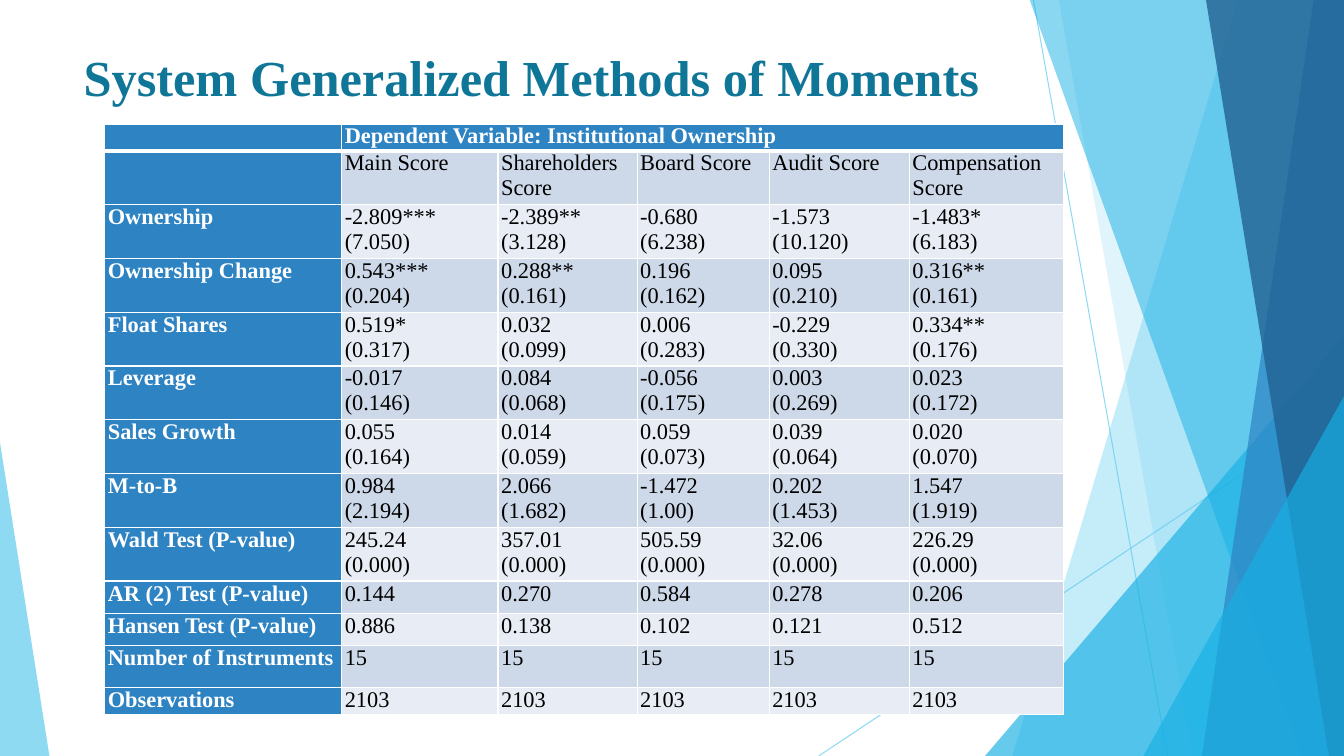
from dataclasses import dataclass
from typing import Any, NamedTuple

import lxml.etree
import pptx
import pptx.dml.color
import pptx.enum.shapes
import pptx.enum.text
import pptx.oxml.ns
import pptx.util

Inches = pptx.util.Inches
qn = pptx.oxml.ns.qn


@dataclass(frozen=True)
class Theme:
    font: str = "Times New Roman"
    title_size: int = 36
    cell_size: int = 16
    title: str = "0F7698"
    sky: str = "5FCBEF"
    cyan: str = "17B0E4"
    blue: str = "2E83C3"
    navy: str = "226292"
    dark_band: str = "CDD9E9"
    light_band: str = "E8EDF5"
    white: str = "FFFFFF"
    black: str = "000000"


THEME = Theme()


class Line(NamedTuple):
    start: tuple[float, float]
    end: tuple[float, float]


class Facet(NamedTuple):
    points: list[tuple[float, float]]
    color: str
    alpha: int


class Wedge(NamedTuple):
    left: float
    top: float
    width: float
    apex: float
    color: str
    alpha: int


class Row(NamedTuple):
    label: str
    height: float
    main: str
    holders: str
    board: str
    audit: str
    pay: str


WIDE, HIGH, TOP = 13.33, 7.5, -0.01


def panel(top_x: float, base_x: float, color: str, alpha: int) -> Facet:
    """A slanted panel that runs to the right edge of the slide."""
    return Facet([(top_x, TOP), (WIDE, TOP), (WIDE, HIGH), (base_x, HIGH)], color, alpha)


# Slide decor, from back to front
DECOR = [
    Line((10.25, 0), (11.58, HIGH)),
    Line((WIDE, 4.03), (8.12, HIGH)),
    panel(12.28, 10.04, THEME.sky, 36),
    panel(10.5, 11.83, THEME.sky, 20),
    Wedge(9.77, 3.33, 3.56, 1, THEME.cyan, 66),
    panel(10.21, 12.91, THEME.cyan, 50),
    panel(13.03, 11.92, THEME.blue, 70),
    panel(11.96, 13.18, THEME.navy, 80),
    Wedge(11.34, 3.93, 1.99, 1, THEME.cyan, 66),
    Wedge(0, 4.39, 0.49, 0, THEME.sky, 70),
]

# Table content
WIDTHS = [2.35, 1.55, 1.38, 1.31, 1.39, 1.53]
ROWS = [
    Row("", 0.21, "Dependent Variable: Institutional Ownership", "", "", "", ""),
    Row("", 0.42, "Main Score", "Shareholders Score", "Board Score", "Audit Score",
        "Compensation Score"),
    Row("Ownership", 0.53, "-2.809***\n(7.050)", "-2.389**\n(3.128)", "-0.680\n(6.238)",
        "-1.573\n(10.120)", "-1.483*\n(6.183)"),
    Row("Ownership Change", 0.42, "0.543***\n(0.204)", "0.288**\n(0.161)", "0.196\n(0.162)",
        "0.095\n(0.210)", "0.316**\n(0.161)"),
    Row("Float Shares", 0.42, "0.519*\n(0.317)", "0.032\n(0.099)", "0.006\n(0.283)",
        "-0.229\n(0.330)", "0.334**\n(0.176)"),
    Row("Leverage", 0.53, "-0.017\n(0.146)", "0.084\n(0.068)", "-0.056\n(0.175)",
        "0.003\n(0.269)", "0.023\n(0.172)"),
    Row("Sales Growth", 0.42, "0.055\n(0.164)", "0.014\n(0.059)", "0.059\n(0.073)",
        "0.039\n(0.064)", "0.020\n(0.070)"),
    Row("M-to-B", 0.53, "0.984\n(2.194)", "2.066\n(1.682)", "-1.472\n(1.00)",
        "0.202\n(1.453)", "1.547\n(1.919)"),
    Row("Wald Test (P-value)", 0.42, "245.24\n(0.000)", "357.01\n(0.000)", "505.59\n(0.000)",
        "32.06\n(0.000)", "226.29\n(0.000)"),
    Row("AR (2) Test (P-value)", 0.32, "0.144", "0.270", "0.584", "0.278", "0.206"),
    Row("Hansen Test (P-value)", 0.32, "0.886", "0.138", "0.102", "0.121", "0.512"),
    Row("Number of Instruments", 0.42, *["15"] * 5),
    Row("Observations", 0.21, *["2103"] * 5),
]


def paint(fill: Any, color: str) -> None:
    fill.solid()
    fill.fore_color.rgb = pptx.dml.color.RGBColor.from_string(color)


def fade(holder: Any, alpha: int) -> None:
    """Set the opacity, in percent, of the first colour inside an element."""
    tint = next(holder.iter(qn("a:srgbClr")))
    lxml.etree.SubElement(tint, qn("a:alpha"), val=str(alpha * 1000))


def write(frame: Any, text: str, *, size: int, color: str, bold: bool = False) -> None:
    frame.word_wrap = True
    for index, part in enumerate(text.split("\n")):
        para = frame.add_paragraph() if index else frame.paragraphs[0]
        if part:
            run = para.add_run()
            run.text = part
            run.font.name = THEME.font
            run.font.size = pptx.util.Pt(size)
            run.font.bold = bold
            run.font.color.rgb = pptx.dml.color.RGBColor.from_string(color)
        # The paragraph mark also counts towards the row height
        mark = lxml.etree.SubElement(para._p, qn("a:endParaRPr"), sz=str(size * 100))
        lxml.etree.SubElement(mark, qn("a:latin"), typeface=THEME.font)


def draw_line(shapes: Any, line: Line) -> None:
    ends = [Inches(value) for value in (*line.start, *line.end)]
    link = shapes.add_connector(pptx.enum.shapes.MSO_CONNECTOR.STRAIGHT, *ends)
    paint(link.line.fill, THEME.sky)
    link.line.width = pptx.util.Pt(0.75)
    props = link._element.spPr
    fade(props, 70)
    lxml.etree.SubElement(props, qn("a:effectLst"))


def draw_area(shapes: Any, area: Facet | Wedge) -> None:
    if isinstance(area, Facet):
        points = [(Inches(x), Inches(y)) for x, y in area.points]
        pen = shapes.build_freeform(*points[0], scale=1.0)
        pen.add_line_segments(points[1:], close=True)
        shape = pen.convert_to_shape()
    else:
        shape = shapes.add_shape(
            pptx.enum.shapes.MSO_SHAPE.ISOSCELES_TRIANGLE, Inches(area.left),
            Inches(area.top), Inches(area.width), Inches(HIGH - area.top))
        shape.adjustments[0] = area.apex
    shape.shadow.inherit = False
    paint(shape.fill, area.color)
    fade(shape._element.spPr, area.alpha)
    shape.line.fill.background()


def edge(cell: Any, side: str, points: int) -> None:
    props = cell._tc.get_or_add_tcPr()
    line = lxml.etree.SubElement(props, qn(f"a:ln{side}"), w=str(pptx.util.Pt(points)))
    fill = lxml.etree.SubElement(line, qn("a:solidFill"))
    lxml.etree.SubElement(fill, qn("a:srgbClr"), val=THEME.white)


def draw_cell(cell: Any, text: str, row: int, col: int) -> None:
    head = row == 0 or col == 0
    cell.margin_left = cell.margin_right = Inches(0.03)
    cell.margin_top = cell.margin_bottom = 0
    thick = {0: "B", 1: "T"}.get(row)
    for side in "LRTB":
        edge(cell, side, 3 if side == thick else 1)
    band = THEME.dark_band if row % 2 else THEME.light_band
    paint(cell.fill, THEME.blue if head else band)
    write(cell.text_frame, text, size=THEME.cell_size,
          color=THEME.white if head else THEME.black, bold=head)


def draw_table(shapes: Any) -> None:
    high = sum(row.height for row in ROWS)
    table = shapes.add_table(len(ROWS), len(WIDTHS), Inches(1.04), Inches(1.23),
                             Inches(sum(WIDTHS)), Inches(high)).table
    table.first_row = table.horz_banding = False
    for col, width in zip(table.columns, WIDTHS):
        col.width = Inches(width)
    for index, row in enumerate(ROWS):
        table.rows[index].height = Inches(row.height)
        for col, text in enumerate((row.label, *row[2:])):
            draw_cell(table.cell(index, col), text, index, col)
    table.cell(0, 1).merge(table.cell(0, 5))


def main() -> None:
    deck = pptx.Presentation()
    deck.slide_width, deck.slide_height = Inches(WIDE), Inches(HIGH)
    shapes = deck.slides.add_slide(deck.slide_layouts[6]).shapes
    for item in DECOR:
        if isinstance(item, Line):
            draw_line(shapes, item)
        else:
            draw_area(shapes, item)
    # Title and table
    title = shapes.add_textbox(Inches(0.73), Inches(0.41), Inches(10.12), Inches(0.96))
    write(title.text_frame, "System Generalized Methods of Moments",
          size=THEME.title_size, color=THEME.title, bold=True)
    draw_table(shapes)
    deck.save("out.pptx")


if __name__ == "__main__":
    main()
